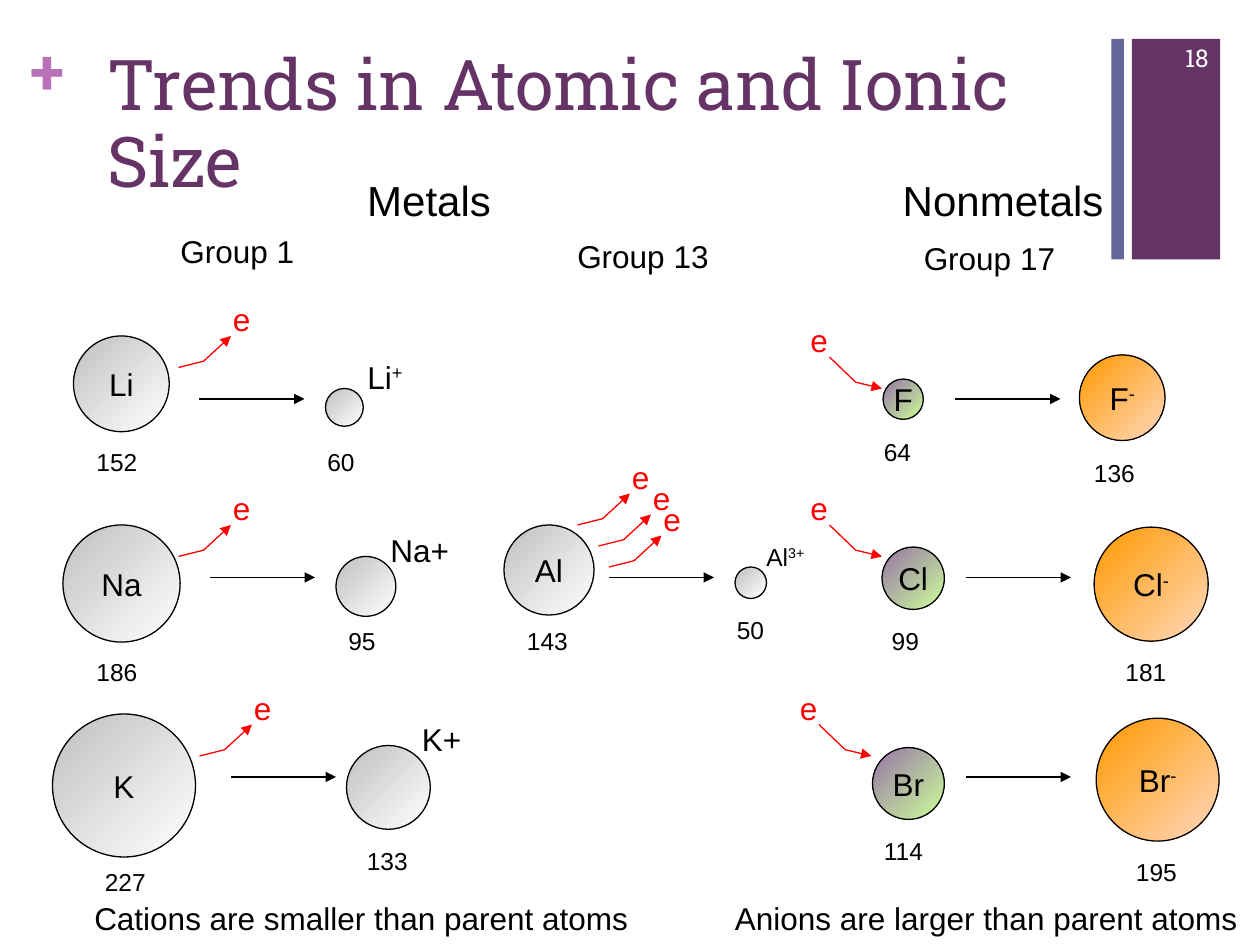
from lxml import etree
from pptx import Presentation
from pptx.dml.color import RGBColor
from pptx.enum.shapes import MSO_CONNECTOR, MSO_SHAPE
from pptx.enum.text import MSO_ANCHOR, MSO_AUTO_SIZE, PP_ALIGN
from pptx.oxml.ns import qn
from pptx.util import Inches, Pt

RECT, OVAL = MSO_SHAPE.RECTANGLE, MSO_SHAPE.OVAL
STRAIGHT = MSO_CONNECTOR.STRAIGHT
TOP, MIDDLE = MSO_ANCHOR.TOP, MSO_ANCHOR.MIDDLE
LEFT, CENTER, RIGHT = PP_ALIGN.LEFT, PP_ALIGN.CENTER, PP_ALIGN.RIGHT
SERIF, SANS = "Roboto Slab", "Arial"
BLACK, RED, PURPLE = "000000", "FF0000", "663366"
METAL, NONMETAL, ANION = ("C0C0C0", "FFFFFF"), ("9775A7", "CCFF99"), ("FF9900", "FFD8BD")
color = RGBColor.from_string

prs = Presentation()
prs.slide_width, prs.slide_height = Inches(10), Inches(7.5)
CELL = prs.slide_width / 120  # grid of 120 columns by 90 rows
slide = prs.slides.add_slide(prs.slide_layouts[5])
shapes = slide.shapes


def cells(*counts):
    return [round(count * CELL) for count in counts]


def write(shape, text, size, hue=BLACK, raised="", font=SANS, align=LEFT, anchor=TOP, wrap=False):
    frame = shape.text_frame
    frame.word_wrap, frame.vertical_anchor = wrap, anchor
    frame.auto_size = MSO_AUTO_SIZE.NONE
    paragraph = frame.paragraphs[0]
    paragraph.alignment = align
    paragraph.font.size, paragraph.font.name = Pt(size), font
    paragraph.font.color.rgb = color(hue)
    paragraph.add_run().text = text
    if raised:
        charge = paragraph.add_run()
        charge.text = raised
        charge.font._element.set("baseline", "30000")
    return paragraph


# Template decoration: bars, plus sign, slide number
for left, width, hue in [(107.8, 8.4, PURPLE), (105.85, 1.2, "666699")]:
    bar = shapes.add_shape(RECT, *cells(left, 3.7, width, 21))
    bar.fill.solid()
    bar.fill.fore_color.rgb = color(hue)
    bar.line.fill.background()
    bar.shadow.inherit = False

plus = shapes.add_textbox(*cells(2.9, 3, 3.5, 7.3))
write(plus, "+", 36, "B870B8", font=SERIF).font.bold = True
plus.text_frame.margin_left = plus.text_frame.margin_right = 0
plus.text_frame.margin_top = plus.text_frame.margin_bottom = 0

number = shapes.add_textbox(*cells(109, 3.1, 7.3, 4.8))
write(number, "18", 14, "FFFFFF", font=SERIF, align=RIGHT, anchor=MIDDLE, wrap=True)

# Title
title = shapes.title
title.left, title.top, title.width, title.height = cells(9, 4, 102, 15)
heading = write(title, "Trends in Atomic and Ionic Size", 40, PURPLE, font=SERIF, wrap=True)
heading.line_spacing = 0.92

# Headings, ion names and conclusions: text, raised part, size, left, top, width
labels = [
    ("Metals", "", 24, 33.8, 16, 14.2),
    ("Nonmetals", "", 24, 84.8, 16, 21.6),
    ("Group 1", "", 18, 16, 21.5, 13.2),
    ("Group 13", "", 18, 53.8, 22, 14.9),
    ("Group 17", "", 18, 86.8, 22.2, 14.9),
    ("Li", "+", 18, 33.8, 33.5, 5.9),
    ("Na+", "", 18, 36, 50, 8),
    ("K+", "", 18, 39, 68, 6.1),
    ("Al", "3+", 14, 71.8, 51, 6.2),
    ("Cations are smaller than parent atoms", "", 18, 7.8, 85, 53.3),
    ("Anions are larger than parent atoms", "", 18, 68.8, 85, 50.3),
]

# Atoms and ions: name, charge, radius in pm, left, top, radius label left, top, colours
particles = [
    ("Li", "", 152, 7, 32, 8, 42, METAL),
    ("Na", "", 186, 6, 50, 8, 62, METAL),
    ("K", "", 227, 5, 68, 8.8, 82, METAL),
    ("", "", 60, 31, 37, 30, 42, METAL),
    ("", "", 95, 32, 53, 32, 59, METAL),
    ("", "", 133, 33, 71, 33.75, 80, METAL),
    ("Al", "", 143, 48, 50, 49, 59, METAL),
    ("", "", 50, 70, 54, 69, 58, METAL),
    ("F", "", 64, 84.1, 36.1, 83, 41, NONMETAL),
    ("Cl", "", 99, 84, 52.1, 83.75, 59, NONMETAL),
    ("Br", "", 114, 83.1, 71.2, 83, 79, NONMETAL),
    ("F", "-", 136, 102.8, 33.8, 103, 43, ANION),
    ("Cl", "-", 181, 104.2, 50.2, 106, 62, ANION),
    ("Br", "-", 195, 104.4, 68.4, 107, 81, ANION),
]
for name, charge, radius, left, top, label_left, label_top, shades in particles:
    diameter = radius * 12 / 200  # one inch stands for 200 pm
    ball = shapes.add_shape(OVAL, *cells(left, top, diameter, diameter))
    ball.fill.gradient()
    ball.fill.gradient_angle = 315
    for stop, shade in zip(ball.fill.gradient_stops, shades):
        stop.color.rgb = color(shade)
    ball.line.color.rgb = color(BLACK)
    ball.line.width = Pt(0.75)
    ball.shadow.inherit = False
    if name:
        write(ball, name, 18, raised=charge, align=CENTER, anchor=MIDDLE)
    digits = str(radius)
    labels.append((digits, "", 14, label_left, label_top, 2.4 + 1.28 * len(digits)))

for text, raised, size, left, top, width in labels:
    box = shapes.add_textbox(*cells(left, top, width, size * 0.2 + 1.2))
    write(box, text, size, raised=raised)

# Reaction arrows
arrows = []
for x, y in [(19, 38), (20, 55), (22, 74), (58, 55), (91, 38), (92, 55), (92, 74)]:
    arrows.append((shapes.add_connector(STRAIGHT, *cells(x, y, x + 10, y)), BLACK))

# Electrons lost or gained: starts, bend, tip, place of the "e"
transfers = [
    ([(17, 35), (17, 53), (19, 72), (55, 50), (57, 52), (58, 54)], (2.4, -0.6), (5, -3), (4, -7)),
    ([(79, 34), (79, 50), (78, 69)], (2.5, 2.4), (5, 3), (-3, -4)),
]
for starts, bend, tip, offset in transfers:
    for x, y in starts:
        builder = shapes.build_freeform(*cells(x, y))
        builder.add_line_segments([cells(x + dx, y + dy) for dx, dy in (bend, tip)], close=False)
        route = builder.convert_to_shape()
        route.fill.background()
        arrows.append((route, RED))
        electron = shapes.add_textbox(*cells(x + offset[0], y + offset[1], 4.1, 4.8))
        write(electron, "e", 18, RED)

# Line style and arrowheads
for arrow, hue in arrows:
    arrow.line.color.rgb = color(hue)
    arrow.line.width = Pt(0.75)
    properties = arrow._element.spPr
    etree.SubElement(properties.find(qn("a:ln")), qn("a:tailEnd"), type="triangle")
    etree.SubElement(properties, qn("a:effectLst"))

prs.save("out.pptx")
